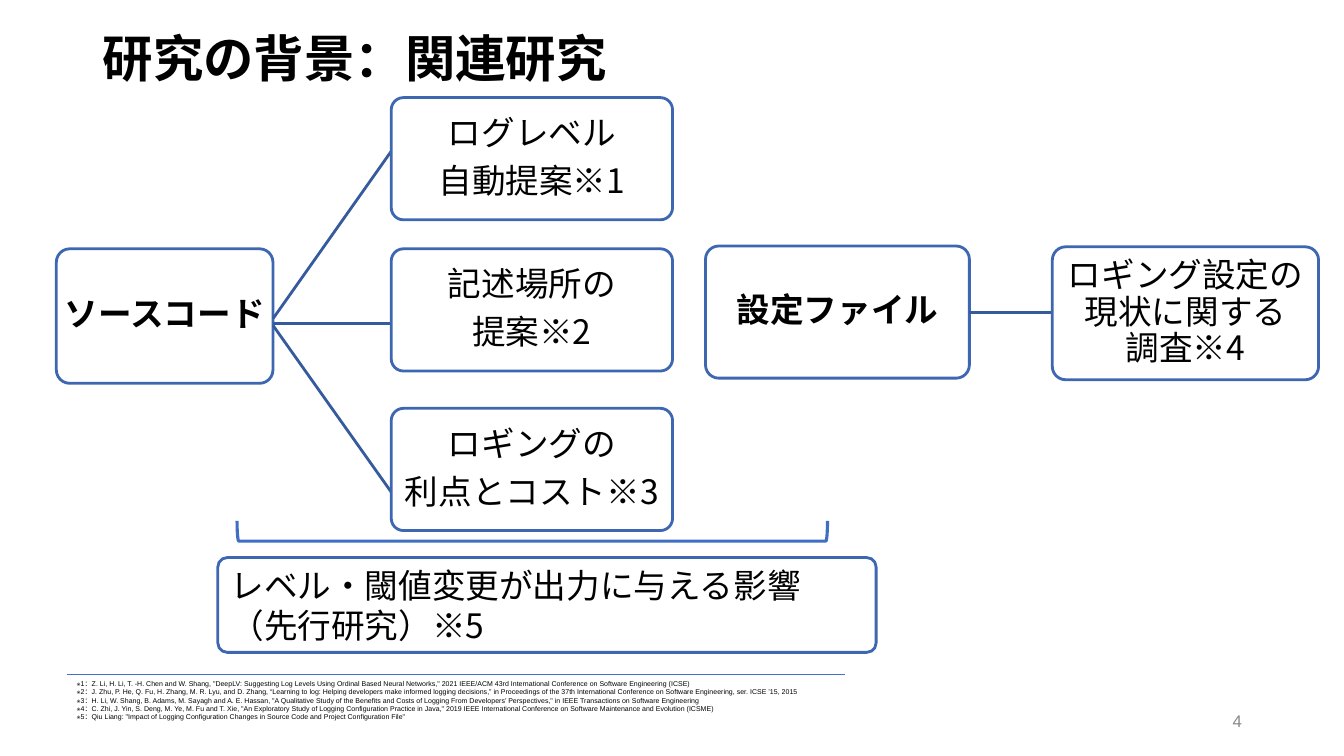
from lxml.etree import SubElement
from pptx import Presentation
from pptx.dml.color import RGBColor
from pptx.enum.shapes import MSO_CONNECTOR, MSO_SHAPE
from pptx.enum.text import MSO_ANCHOR, PP_ALIGN
from pptx.oxml.ns import qn
from pptx.util import Cm, Pt

COLORS = {
    "ink": "000000",
    "paper": "FFFFFF",
    "outline": "3E67B2",
    "link": "365B9D",
    "bracket": "3F6FC3",
    "rule": "4472C4",
    "number": "888888",
}
JAPANESE = "Noto Sans CJK JP"
LATIN = "Arial"


def color(name):
    return RGBColor.from_string(COLORS[name])


def write(frame, paragraphs, size=24, font=JAPANESE, ink="ink", bold=False,
          align=PP_ALIGN.LEFT, anchor=MSO_ANCHOR.MIDDLE, spacing=1.0, after=0,
          inset=(0.25, 0.13)):
    frame.word_wrap = True
    frame.vertical_anchor = anchor
    frame.margin_left = frame.margin_right = Cm(inset[0])
    frame.margin_top = frame.margin_bottom = Cm(inset[1])
    for index, words in enumerate(paragraphs):
        paragraph = frame.add_paragraph() if index else frame.paragraphs[0]
        paragraph.alignment = align
        paragraph.line_spacing = spacing
        paragraph.space_after = Pt(after)
        run = paragraph.add_run()
        run.text = words
        run.font.size = Pt(size)
        run.font.name = font
        run.font.bold = bold
        run.font.color.rgb = color(ink)
        SubElement(run.font._element, qn("a:ea"), typeface=JAPANESE)


class SlideBuilder:
    def __init__(self, slide, outline_width=2):
        self.shapes = slide.shapes
        self.outline_width = outline_width

    def text(self, place, paragraphs, **style):
        area = self.shapes.add_textbox(*map(Cm, place))
        write(area.text_frame, paragraphs, **style)

    def outlined(self, kind, place, line, width):
        shape = self.shapes.add_shape(kind, *map(Cm, place))
        shape.shadow.inherit = False
        shape.line.color.rgb = color(line)
        shape.line.width = Pt(width)
        return shape

    def box(self, place, paragraphs, **style):
        box = self.outlined(MSO_SHAPE.ROUNDED_RECTANGLE, place, "outline", self.outline_width)
        box.adjustments[0] = 0.1
        box.fill.solid()
        box.fill.fore_color.rgb = color("paper")
        write(box.text_frame, paragraphs, **style)

    def node(self, place, paragraphs, bold=False, after=8.4):
        self.box(place, paragraphs, bold=bold, after=after, spacing=0.9,
                 align=PP_ALIGN.CENTER, inset=(0.05, 0.05))

    def bracket(self, place):
        bracket = self.outlined(MSO_SHAPE.LEFT_BRACKET, place, "bracket", 2.25)
        bracket.fill.background()
        bracket.rotation = 270

    def line(self, start, end, ink="link", width=2):
        line = self.shapes.add_connector(MSO_CONNECTOR.STRAIGHT, *map(Cm, start + end))
        line.line.color.rgb = color(ink)
        line.line.width = Pt(width)
        SubElement(line._element.spPr, qn("a:effectLst"))


REFERENCES = [
    '※1：Z. Li, H. Li, T. -H. Chen and W. Shang, "DeepLV: Suggesting Log Levels Using Ordinal '
    'Based Neural Networks," 2021 IEEE/ACM 43rd International Conference on Software Engineering (ICSE)',
    '※2：J. Zhu, P. He, Q. Fu, H. Zhang, M. R. Lyu, and D. Zhang, “Learning to log: Helping '
    'developers make informed logging decisions,” in Proceedings of the 37th International '
    'Conference on Software Engineering, ser. ICSE ’15, 2015',
    '※3：H. Li, W. Shang, B. Adams, M. Sayagh and A. E. Hassan, "A Qualitative Study of the '
    'Benefits and Costs of Logging From Developers’ Perspectives," in IEEE Transactions on '
    'Software Engineering',
    '※4：C. Zhi, J. Yin, S. Deng, M. Ye, M. Fu and T. Xie, "An Exploratory Study of Logging '
    'Configuration Practice in Java," 2019 IEEE International Conference on Software Maintenance '
    'and Evolution (ICSME)',
    '※5：Qiu Liang: "Impact of Logging Configuration Changes in Source Code and Project '
    'Configuration File"',
]

TOPICS = [
    (2.46, 8.03, 3.81, ["ログレベル", "自動提案※1"]),
    (6.27, 8.15, 8.15, ["記述場所の", "提案※2"]),
    (10.29, 8.2, 12.4, ["ロギングの", "利点とコスト※3"]),
]


def main():
    deck = Presentation()
    deck.slide_width, deck.slide_height = Cm(33.87), Cm(19.05)
    page = SlideBuilder(deck.slides.add_slide(deck.slide_layouts[6]))

    page.text((2.34, 0.08, 29.21, 2.95), ["研究の背景：関連研究"],
              size=36, font=LATIN, bold=True, spacing=0.9)
    page.line((1.68, 16.99), (21.29, 16.99), ink="rule", width=0.75)
    page.text((1.68, 16.99, 29.85, 1.32), REFERENCES, size=5, font=LATIN, anchor=MSO_ANCHOR.TOP)

    page.node((1.42, 6.27, 5.46, 3.39), ["ソースコード"], bold=True)
    for top, link_start, link_end, topic in TOPICS:
        page.line((6.88, link_start), (9.86, link_end))
        page.node((9.86, top, 7.09, 3.08), topic)

    page.node((17.78, 6.2, 6.65, 3.33), ["設定ファイル"], bold=True)
    page.line((24.43, 7.87), (26.52, 7.87))
    page.node((26.52, 6.22, 6.71, 3.35), ["ロギング設定の現状に関する", "調査※4"], after=0)

    page.bracket((13.16, 5.94, 0.51, 14.88))
    page.box((5.49, 14.05, 16.59, 2.39), ["レベル・閾値変更が出力に与える影響（先行研究）※5"])
    page.text((23.93, 17.65, 7.62, 1.02), ["4"], size=12, font=LATIN, ink="number",
              align=PP_ALIGN.RIGHT)

    deck.save("out.pptx")


if __name__ == "__main__":
    main()
